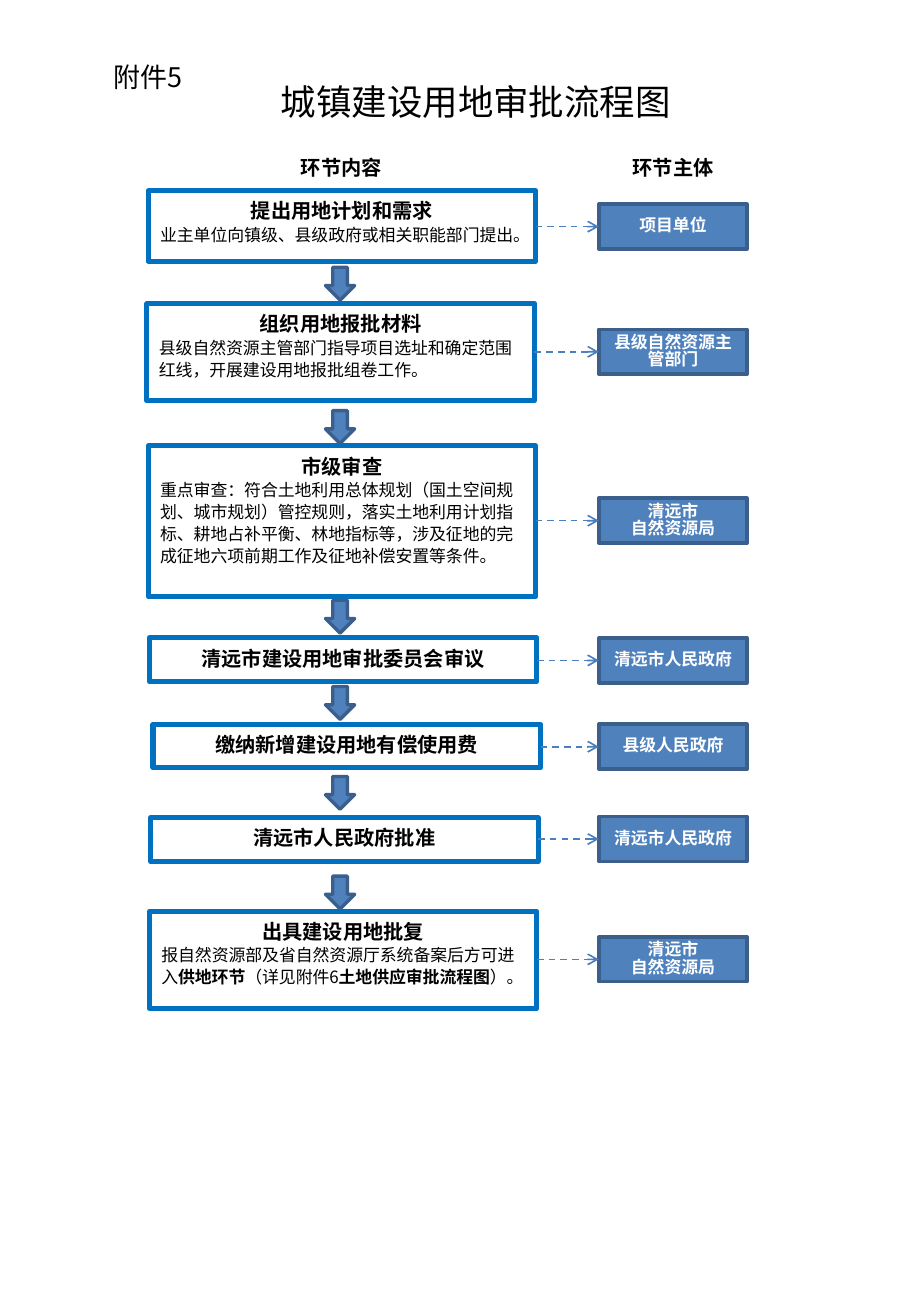
import pptx
import pptx.util
import pptx.dml.color
import pptx.enum.dml
import pptx.enum.shapes
import pptx.enum.text
import pptx.oxml
import pptx.oxml.ns
from pptx.util import Inches

FONT = "Noto Sans CJK SC"
COLORS = {
    "text": "000000",
    "white": "FFFFFF",
    "step_line": "0070C0",
    "fill": "4F81BD",
    "fill_line": "3A5F8C",
    "link": "4B7EBC",
}
ALIGN = pptx.enum.text.PP_ALIGN
ANCHOR = pptx.enum.text.MSO_ANCHOR
SHAPE = pptx.enum.shapes.MSO_SHAPE

STEP_W = 3.19
OWNER_X, OWNER_W, OWNER_H = 4.93, 1.22, 0.37
ARROW_X, ARROW_W, ARROW_H = 2.68, 0.24, 0.27
STEP_SPACING, OWNER_SPACING = 1.08, 0.85

# left, top, height, heading, body with bold parts between bars, owner top, owner
STEPS = [
    (1.22, 1.57, 0.58, "提出用地计划和需求",
     "业主单位向镇级、县级政府或相关职能部门提出。", 1.68, "项目单位"),
    (1.21, 2.5, 0.8, "组织用地报批材料",
     "县级自然资源主管部门指导项目选址和确定范围红线，开展建设用地报批组卷工作。",
     2.71, "县级自然资源主管部门"),
    (1.22, 3.67, 1.24, "市级审查",
     "重点审查：符合土地利用总体规划（国土空间规划、城市规划）管控规则，"
     "落实土地利用计划指标、耕地占补平衡、林地指标等，"
     "涉及征地的完成征地六项前期工作及征地补偿安置等条件。",
     4.1, "清远市\n自然资源局"),
    (1.23, 5.25, 0.36, "清远市建设用地审批委员会审议", "", 5.25, "清远市人民政府"),
    (1.26, 5.96, 0.36, "缴纳新增建设用地有偿使用费", "", 5.96, "县级人民政府"),
    (1.24, 6.73, 0.36, "清远市人民政府批准", "", 6.72, "清远市人民政府"),
    (1.23, 7.5, 0.8, "出具建设用地批复",
     "报自然资源部及省自然资源厅系统备案后方可进入|供地环节|（详见附件6|土地供应审批流程图|）。",
     7.71, "清远市\n自然资源局"),
]
ARROW_TOPS = [2.2, 3.38, 4.94, 5.65, 6.39, 7.21]


def rgb(name):
    return pptx.dml.color.RGBColor.from_string(COLORS[name])


def format_run(r, size, color="text", bold=False):
    r.font.size = pptx.util.Pt(size)
    r.font.bold = bold
    r.font.name = FONT
    r.font.color.rgb = rgb(color)
    ea = pptx.oxml.parse_xml(f'<a:ea {pptx.oxml.ns.nsdecls("a")} typeface="{FONT}"/>')
    r.font._element.find(pptx.oxml.ns.qn("a:latin")).addnext(ea)


def add_box(s, kind, x, y, w, h, line, width, fill=None):
    sp = s.shapes.add_shape(kind, Inches(x), Inches(y), Inches(w), Inches(h))
    sp.shadow.inherit = False
    sp.line.color.rgb = rgb(line)
    sp.line.width = pptx.util.Pt(width)
    if fill:
        sp.fill.solid()
        sp.fill.fore_color.rgb = rgb(fill)
    else:
        sp.fill.background()
    return sp


def add_step(s, x, y, h, heading, body):
    sp = add_box(s, SHAPE.RECTANGLE, x, y, STEP_W, h, "step_line", 3)
    tf = sp.text_frame
    tf.word_wrap = True
    tf.vertical_anchor = ANCHOR.TOP
    tf.text = heading
    p = tf.paragraphs[0]
    p.alignment = ALIGN.CENTER
    p.line_spacing = STEP_SPACING
    format_run(p.runs[0], 12, bold=True)
    if body:
        p = tf.add_paragraph()
        p.alignment = ALIGN.LEFT
        p.line_spacing = STEP_SPACING
        for i, part in enumerate(body.split("|")):
            r = p.add_run()
            r.text = part
            format_run(r, 10, bold=i % 2 == 1)


def add_owner(s, y, label):
    sp = add_box(s, SHAPE.RECTANGLE, OWNER_X, y, OWNER_W, OWNER_H, "fill_line", 2, "fill")
    tf = sp.text_frame
    tf.word_wrap = True
    tf.vertical_anchor = ANCHOR.MIDDLE
    tf.text = label
    for p in tf.paragraphs:
        p.alignment = ALIGN.CENTER
        p.line_spacing = OWNER_SPACING
        format_run(p.runs[0], 10, "white", True)


def add_link(s, x, y):
    cn = s.shapes.add_connector(pptx.enum.shapes.MSO_CONNECTOR.STRAIGHT,
                                Inches(x), Inches(y), Inches(OWNER_X), Inches(y))
    cn.line.color.rgb = rgb("link")
    cn.line.width = pptx.util.Pt(1)
    cn.line.dash_style = pptx.enum.dml.MSO_LINE.DASH
    ns = pptx.oxml.ns.nsdecls("a")
    cn.line._get_or_add_ln().append(pptx.oxml.parse_xml(f'<a:tailEnd {ns} type="arrow"/>'))
    cn._element.spPr.append(pptx.oxml.parse_xml(f"<a:effectLst {ns}/>"))


def add_label(s, x, y, w, h, text, size, bold=False, align=ALIGN.LEFT):
    sp = s.shapes.add_textbox(Inches(x), Inches(y), Inches(w), Inches(h))
    tf = sp.text_frame
    tf.word_wrap = True
    tf.vertical_anchor = ANCHOR.MIDDLE
    tf.text = text
    p = tf.paragraphs[0]
    p.alignment = align
    format_run(p.runs[0], size, bold=bold)


def main():
    prs = pptx.Presentation()
    prs.slide_width, prs.slide_height = Inches(7.5), Inches(10.83)
    s = prs.slides.add_slide(prs.slide_layouts[6])

    for x, y, h, heading, body, owner_y, owner in STEPS:
        add_step(s, x, y, h, heading, body)
        add_owner(s, owner_y, owner)
        add_link(s, x + STEP_W, owner_y + OWNER_H / 2)
    for y in ARROW_TOPS:
        add_box(s, SHAPE.DOWN_ARROW, ARROW_X, y, ARROW_W, ARROW_H, "fill_line", 2, "fill")

    for x, text in ((2.38, "环节内容"), (5.11, "环节主体")):
        add_label(s, x, 1.23, 0.87, 0.3, text, 12, bold=True)
    add_label(s, 0.91, 0.61, 5.95, 0.45, " 城镇建设用地审批流程图", 21, align=ALIGN.CENTER)
    add_label(s, 0.84, 0.45, 0.96, 0.37, "附件5", 16)

    prs.save("out.pptx")


if __name__ == "__main__":
    main()
